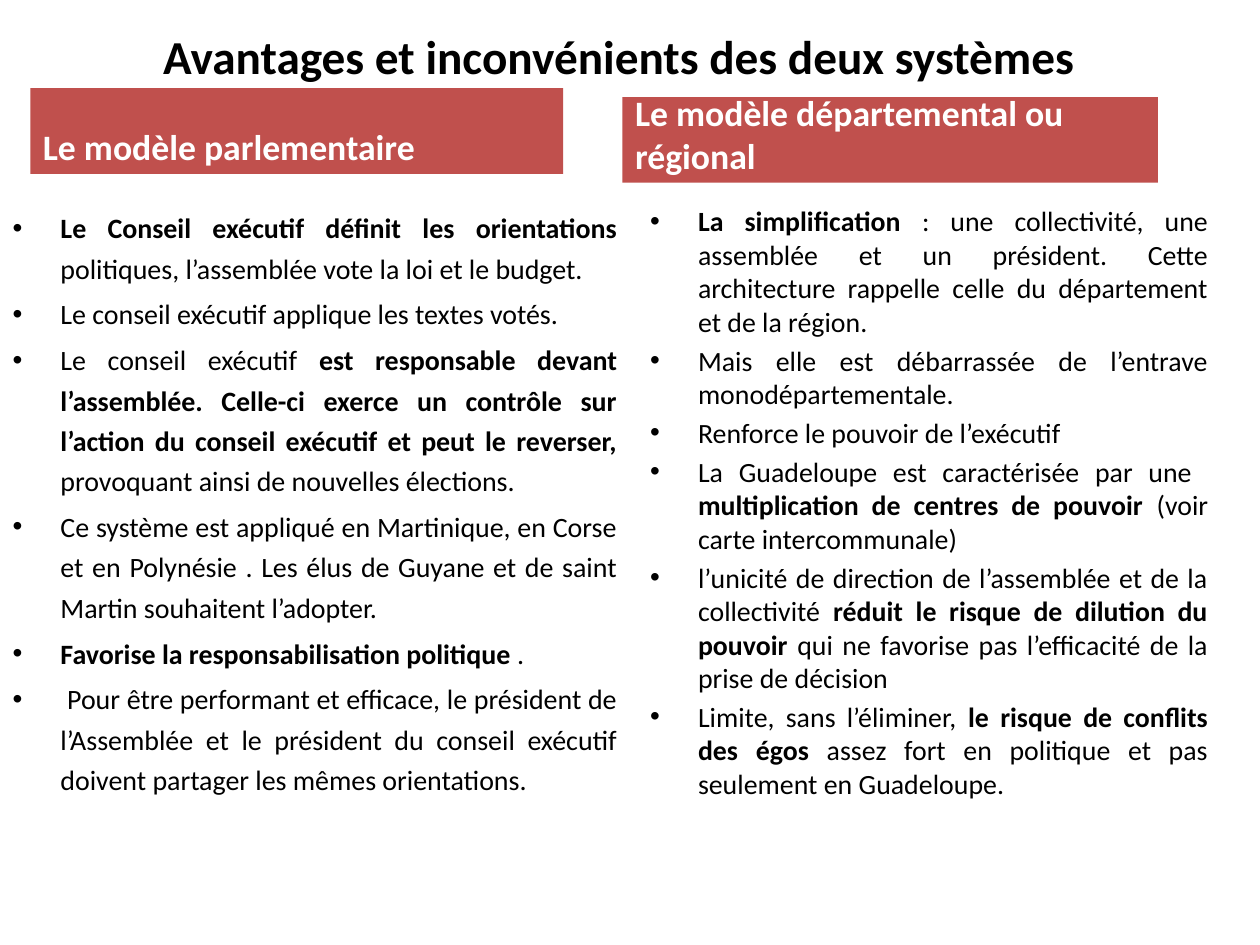
from pptx import Presentation
from pptx.dml.color import RGBColor
from pptx.enum.text import MSO_ANCHOR, MSO_AUTO_SIZE, PP_ALIGN
from pptx.oxml.xmlchemy import OxmlElement
from pptx.util import Inches, Pt

COLOURS = {"text": "000000", "header": "C0504D", "header_text": "FFFFFF"}
FONT = "Calibri"

# Bold passages stand between ** marks.
PARLIAMENTARY = [
    "**Le Conseil exécutif définit les orientations **politiques, l’assemblée vote la loi et le budget.",
    "Le conseil exécutif applique les textes votés.",
    "Le conseil exécutif **est responsable devant l’assemblée. Celle-ci exerce un contrôle sur "
    "l’action du conseil exécutif et peut le reverser, **provoquant ainsi de nouvelles élections.",
    "Ce système est appliqué en Martinique, en Corse et en Polynésie . Les élus de Guyane et de "
    "saint Martin souhaitent l’adopter.",
    "**Favorise la responsabilisation politique **.",
    " Pour être performant et efficace, le président de l’Assemblée et le président du conseil "
    "exécutif doivent partager les mêmes orientations.",
]
DEPARTMENTAL = [
    "**La simplification **: une collectivité, une assemblée et un président. Cette architecture "
    "rappelle celle du département et de la région.",
    "Mais elle est débarrassée de l’entrave monodépartementale.",
    "Renforce le pouvoir de l’exécutif",
    "La Guadeloupe est caractérisée par une  **multiplication de centres de pouvoir **(voir carte "
    "intercommunale)",
    "l’unicité de direction de l’assemblée et de la collectivité **réduit le risque de dilution du "
    "pouvoir **qui ne favorise pas l’efficacité de la prise de décision",
    "Limite, sans l’éliminer, **le risque de conflits des égos** assez fort en politique et pas "
    "seulement en Guadeloupe.",
]


class ComparisonSlide:
    """Holds the style and the slide, and fills its placeholders."""

    def __init__(self, presentation):
        self.slide = presentation.slides.add_slide(presentation.slide_layouts[4])

    def place(self, index, box, anchor):
        holder = self.slide.placeholders[index]
        holder.left, holder.top, holder.width, holder.height = map(Inches, box)
        frame = holder.text_frame
        frame.word_wrap = True
        frame.auto_size = MSO_AUTO_SIZE.NONE
        frame.vertical_anchor = anchor
        return holder

    def style(self, run, size, colour, bold):
        run.font.name = FONT
        run.font.size = Pt(size)
        run.font.bold = bold
        run.font.color.rgb = RGBColor.from_string(COLOURS[colour])

    def line(self, holder, text, size, colour, align):
        paragraph = holder.text_frame.paragraphs[0]
        paragraph.text = text
        paragraph.alignment = align
        paragraph.space_before = Pt(0)
        self.style(paragraph.runs[0], size, colour, True)

    def title(self, text, box):
        holder = self.place(0, box, MSO_ANCHOR.MIDDLE)
        self.line(holder, text, 27, "text", PP_ALIGN.CENTER)

    def header(self, index, text, box):
        holder = self.place(index, box, MSO_ANCHOR.BOTTOM)
        holder.fill.solid()
        holder.fill.fore_color.rgb = RGBColor.from_string(COLOURS["header"])
        self.line(holder, text, 20.4, "header_text", PP_ALIGN.LEFT)

    def bullets(self, index, items, box, size, line_spacing):
        frame = self.place(index, box, MSO_ANCHOR.TOP).text_frame
        for number, item in enumerate(items):
            paragraph = frame.add_paragraph() if number else frame.paragraphs[0]
            paragraph.alignment = PP_ALIGN.JUSTIFY
            paragraph.line_spacing = line_spacing
            paragraph.space_before = Pt(3.2 if number else 0)
            self.add_bullet(paragraph)
            for position, part in enumerate(item.split("**")):
                if part:
                    run = paragraph.add_run()
                    run.text = part
                    self.style(run, size, "text", position % 2 == 1)

    def add_bullet(self, paragraph):
        properties = paragraph._p.get_or_add_pPr()
        properties.set("marL", str(Inches(0.38)))
        properties.set("indent", str(Inches(-0.38)))
        font = OxmlElement("a:buFont")
        font.set("typeface", "Arial")
        mark = OxmlElement("a:buChar")
        mark.set("char", "•")
        properties.extend([font, mark])


def main():
    presentation = Presentation()
    presentation.slide_width = Inches(10)
    presentation.slide_height = Inches(7.5)

    comparison = ComparisonSlide(presentation)
    comparison.title("Avantages et inconvénients des deux systèmes", (0.6, 0.1, 8.62, 0.68))
    comparison.header(1, "Le modèle parlementaire", (0.24, 0.7, 4.23, 0.68))
    comparison.header(3, "Le modèle départemental ou régional", (4.94, 0.77, 4.25, 0.68))
    comparison.bullets(2, PARLIAMENTARY, (0, 1.57, 5, 5.23), 16, 1.2)
    comparison.bullets(4, DEPARTMENTAL, (5.06, 1.57, 4.63, 4.99), 15.9, 1.0)
    presentation.save("out.pptx")


if __name__ == "__main__":
    main()
